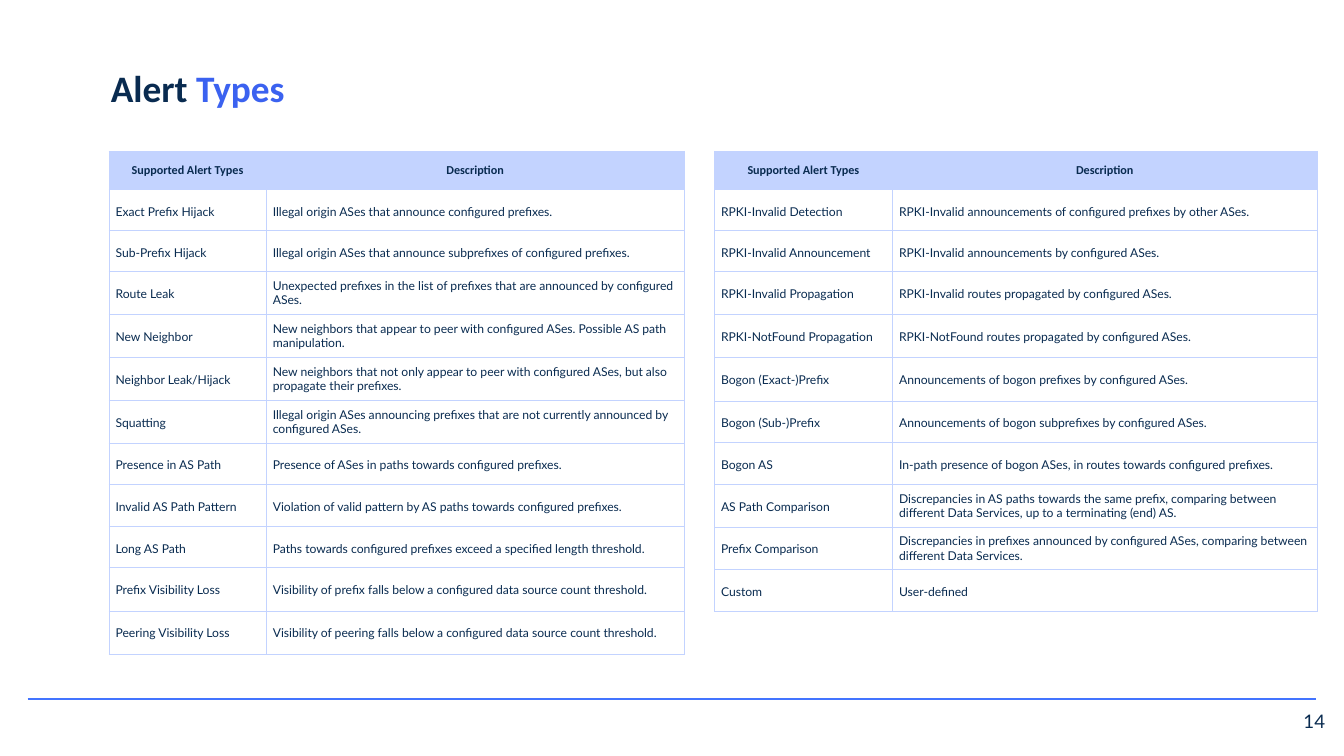
from lxml import etree
from pptx import Presentation
from pptx.dml.color import RGBColor
from pptx.enum.shapes import MSO_CONNECTOR
from pptx.enum.text import MSO_ANCHOR, PP_ALIGN
from pptx.oxml.ns import qn
from pptx.util import Inches, Pt

NAVY = RGBColor(0x09, 0x2B, 0x50)
BLUE = RGBColor(0x3B, 0x62, 0xF0)
RULE_BLUE = RGBColor(0x43, 0x74, 0xFF)
PALE_BLUE = RGBColor(0xC3, 0xD3, 0xFF)
STRAIGHT = MSO_CONNECTOR.STRAIGHT
TOP, MIDDLE = MSO_ANCHOR.TOP, MSO_ANCHOR.MIDDLE
LEFT, CENTER, RIGHT = PP_ALIGN.LEFT, PP_ALIGN.CENTER, PP_ALIGN.RIGHT

HEADER = ("Supported Alert Types", "Description")
HEADER_HEIGHT = 0.57
TABLE_TOP = 2.25

# Each row: height, alert type, description, lines in the description
HIJACK_ALERTS = [
    (0.61, "Exact Prefix Hijack", "Illegal origin ASes that announce configured prefixes.", 1),
    (0.61, "Sub-Prefix Hijack",
     "Illegal origin ASes that announce subprefixes of configured prefixes.", 1),
    (0.64, "Route Leak",
     "Unexpected prefixes in the list of prefixes that are announced by configured ASes.", 2),
    (0.64, "New Neighbor",
     "New neighbors that appear to peer with configured ASes. Possible AS path manipulation.", 2),
    (0.64, "Neighbor Leak/Hijack",
     "New neighbors that not only appear to peer with configured ASes, "
     "but also propagate their prefixes.", 2),
    (0.63, "Squatting",
     "Illegal origin ASes announcing prefixes that are not currently announced "
     "by configured ASes.", 2),
    (0.62, "Presence in AS Path", "Presence of ASes in paths towards configured prefixes.", 1),
    (0.62, "Invalid AS Path Pattern",
     "Violation of valid pattern by AS paths towards configured prefixes.", 1),
    (0.61, "Long AS Path",
     "Paths towards configured prefixes exceed a specified length threshold.", 1),
    (0.65, "Prefix Visibility Loss",
     "Visibility of prefix falls below a configured data source count threshold.", 1),
    (0.65, "Peering Visibility Loss",
     "Visibility of peering falls below a configured data source count threshold.", 1),
]
RPKI_ALERTS = [
    (0.61, "RPKI-Invalid Detection",
     "RPKI-Invalid announcements of configured prefixes by other ASes.", 1),
    (0.61, "RPKI-Invalid Announcement", "RPKI-Invalid announcements by configured ASes.", 1),
    (0.64, "RPKI-Invalid Propagation", "RPKI-Invalid routes propagated by configured ASes.", 1),
    (0.64, "RPKI-NotFound Propagation", "RPKI-NotFound routes propagated by configured ASes.", 1),
    (0.65, "Bogon (Exact-)Prefix", "Announcements of bogon prefixes by configured ASes.", 1),
    (0.62, "Bogon (Sub-)Prefix", "Announcements of bogon subprefixes by configured ASes.", 1),
    (0.62, "Bogon AS",
     "In-path presence of bogon ASes, in routes towards configured prefixes.", 1),
    (0.63, "AS Path Comparison",
     "Discrepancies in AS paths towards the same prefix, comparing between "
     "different Data Services, up to a terminating (end) AS.", 2),
    (0.63, "Prefix Comparison",
     "Discrepancies in prefixes announced by configured ASes, comparing between "
     "different Data Services.", 2),
    (0.62, "Custom", "User-defined", 1),
]
# Left edge, column widths, rows
TABLES = [
    (1.62, (2.34, 6.22), HIJACK_ALERTS),
    (10.63, (2.65, 6.32), RPKI_ALERTS),
]


def style_run(r, font, size, color, bold=False):
    r.font.name = font
    r.font.size = Pt(size)
    r.font.color.rgb = color
    r.font.bold = bold


def fill_cell(cell, text, top_margin, header):
    cell.margin_left = cell.margin_right = cell.margin_bottom = Inches(0.1)
    cell.margin_top = Inches(top_margin)
    cell.vertical_anchor = TOP
    cell.text = text
    p = cell.text_frame.paragraphs[0]
    p.alignment = CENTER if header else LEFT
    style_run(p.runs[0], "Calibri" if header else "Lato", 13, NAVY, header)
    tcPr = cell._tc.get_or_add_tcPr()
    for side in ("a:lnL", "a:lnR", "a:lnT", "a:lnB"):
        ln = etree.SubElement(tcPr, qn(side), w=str(Pt(0.75)))
        solid = etree.SubElement(ln, qn("a:solidFill"))
        etree.SubElement(solid, qn("a:srgbClr"), val=str(PALE_BLUE))
    if header:
        cell.fill.solid()
        cell.fill.fore_color.rgb = PALE_BLUE
    else:
        cell.fill.background()


prs = Presentation()
prs.slide_width, prs.slide_height = Inches(20), Inches(11.25)
s = prs.slides.add_slide(prs.slide_layouts[5])

# Footer rule
rule = s.shapes.add_connector(STRAIGHT, Inches(0.41), Inches(10.4), Inches(19.59), Inches(10.4))
rule.line.color.rgb = RULE_BLUE
rule.line.width = Pt(1.5)
etree.SubElement(rule._element.spPr, qn("a:effectLst"))

# Title
title = s.shapes.title
title.left, title.top = Inches(1.55), Inches(0.86)
title.width, title.height = Inches(16.18), Inches(0.88)
tf = title.text_frame
tf.margin_left = tf.margin_right = tf.margin_top = tf.margin_bottom = Inches(0.1)
tf.vertical_anchor = MIDDLE
p = tf.paragraphs[0]
p.alignment = LEFT
for text, color in (("Alert ", NAVY), ("Types", BLUE)):
    r = p.add_run()
    r.text = text
    style_run(r, "Calibri", 40, color, True)

# Page number
number = s.shapes.add_textbox(Inches(18.72), Inches(10.39), Inches(1.2), Inches(0.86))
tf = number.text_frame
tf.word_wrap = True
tf.margin_left = tf.margin_right = tf.margin_top = tf.margin_bottom = Inches(0.2)
tf.text = "14"
p = tf.paragraphs[0]
p.alignment = RIGHT
style_run(p.runs[0], "Lato", 20, NAVY)

# Alert tables
for left, widths, alerts in TABLES:
    height = HEADER_HEIGHT + sum(alert[0] for alert in alerts)
    table = s.shapes.add_table(len(alerts) + 1, 2, Inches(left), Inches(TABLE_TOP),
                               Inches(sum(widths)), Inches(height)).table
    table.first_row = table.horz_banding = False
    for column, width in zip(table.columns, widths):
        column.width = Inches(width)
    table.rows[0].height = Inches(HEADER_HEIGHT)
    for col, text in enumerate(HEADER):
        fill_cell(table.cell(0, col), text, 0.18, True)
    for row, (row_height, name, description, lines) in enumerate(alerts, 1):
        table.rows[row].height = Inches(row_height)
        fill_cell(table.cell(row, 0), name, 0.22, False)
        fill_cell(table.cell(row, 1), description, 0.22 if lines == 1 else 0.1, False)

prs.save("out.pptx")
